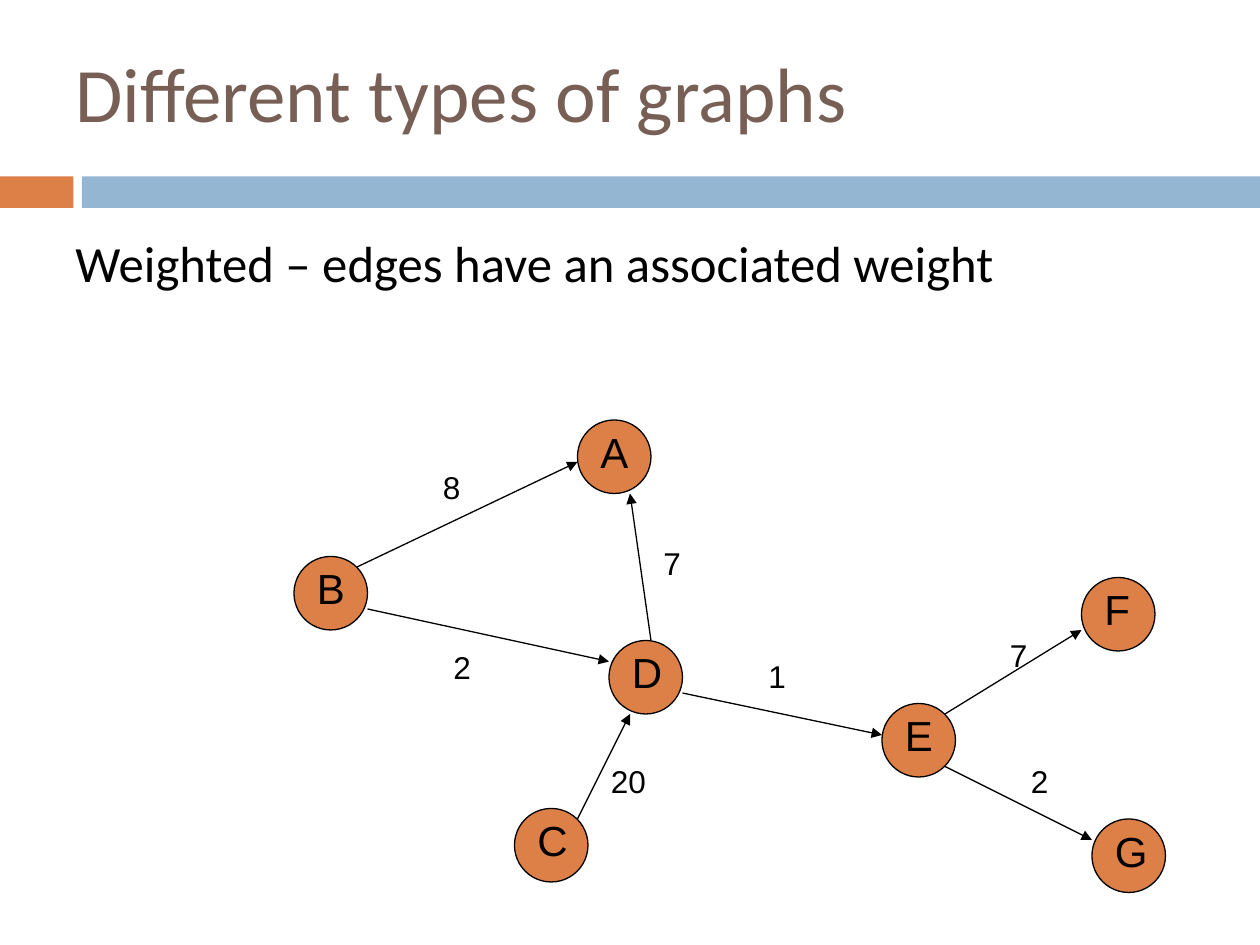
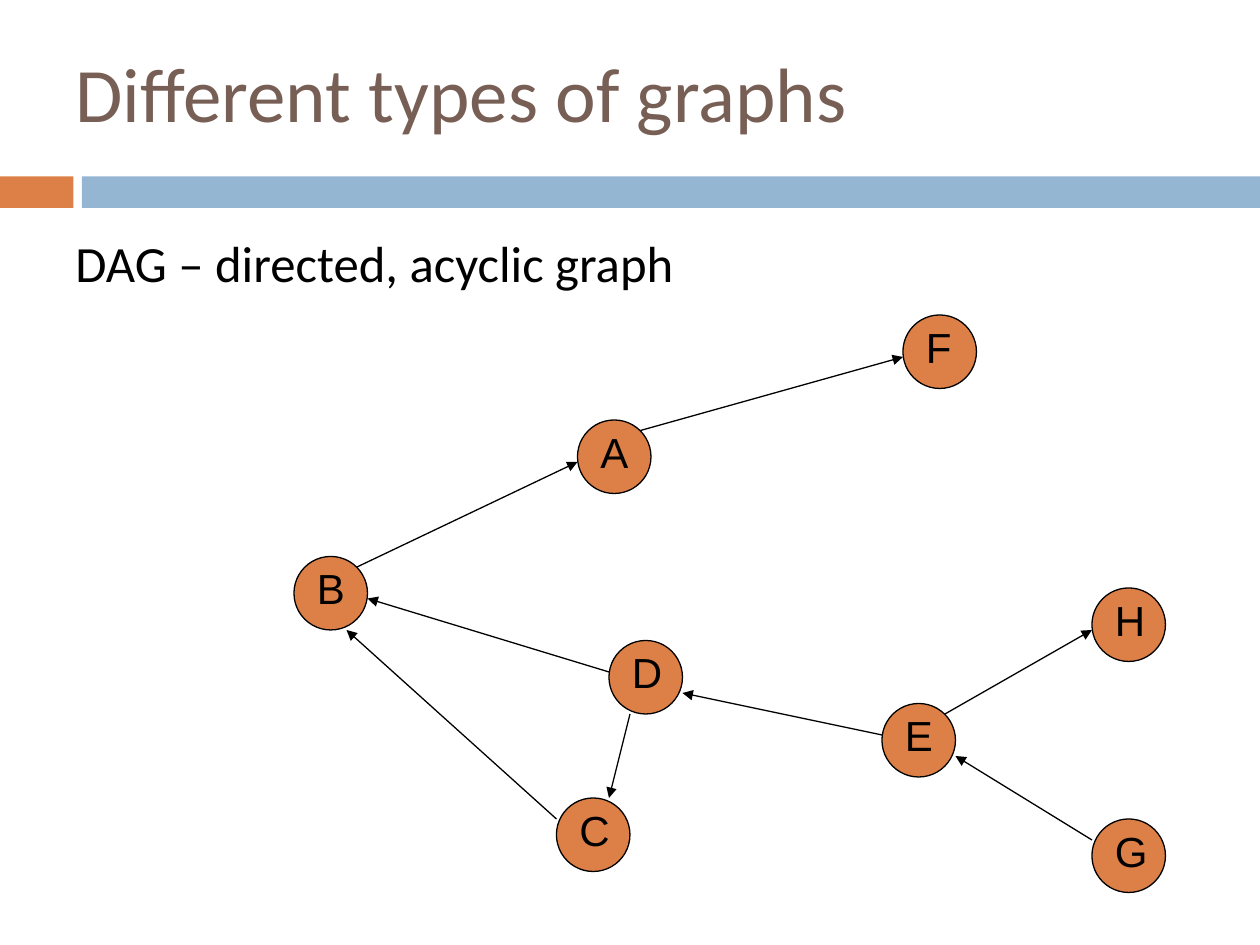
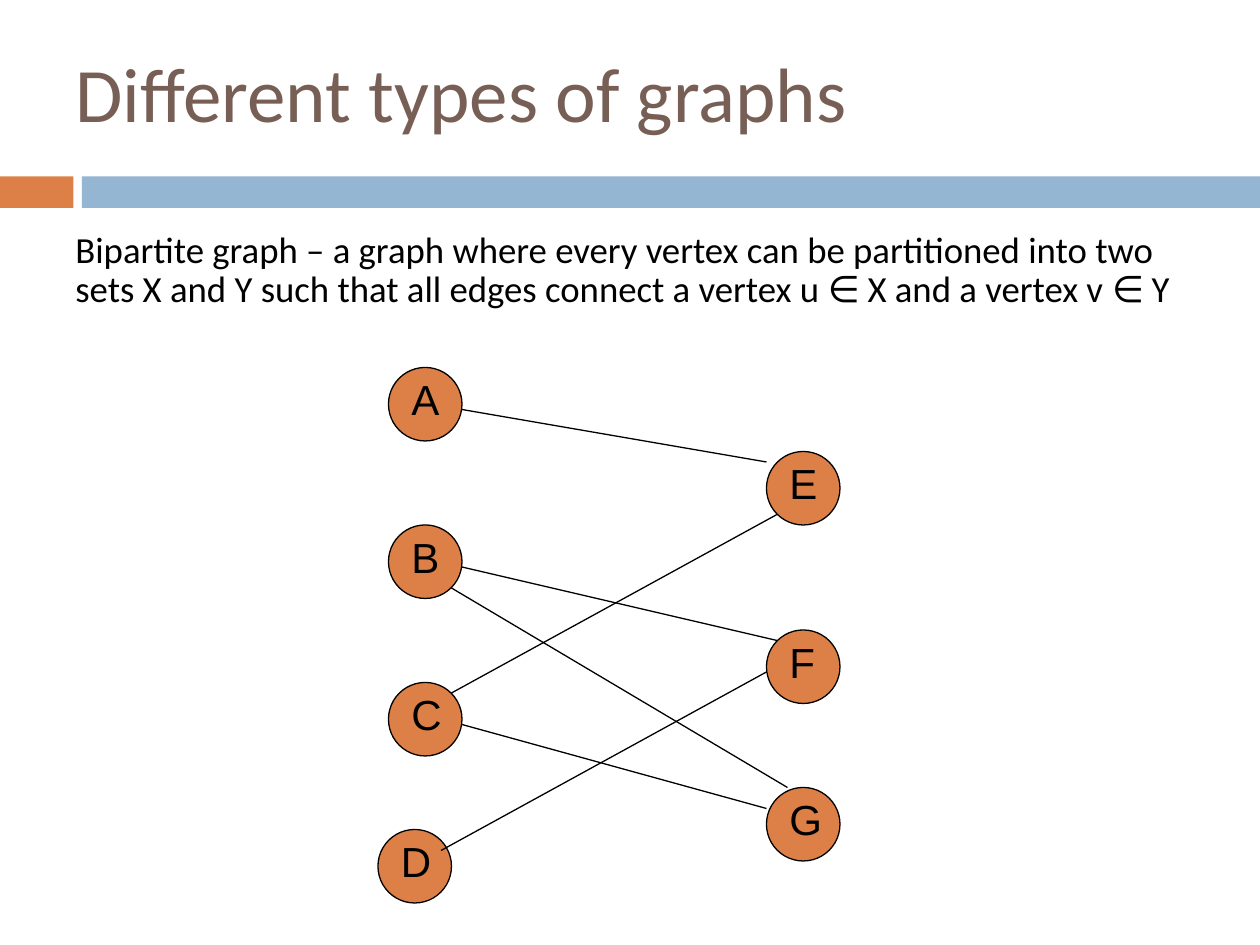
from lxml.etree import SubElement
from pptx import Presentation
from pptx.dml.color import RGBColor
from pptx.enum.shapes import MSO_CONNECTOR as CONN, MSO_SHAPE as SHAPE
from pptx.enum.text import MSO_ANCHOR as ANCHOR
from pptx.oxml.ns import qn
from pptx.util import Pt

COLORS = {"node": "DD8047", "band": "94B6D2", "title": "775F55", "ink": "000000"}
TITLE = "Different types of graphs"
NODE = 42
LABEL_INDENT = 6

WEIGHTED_NODES = {
    "A": (330, 240), "B": (168, 318), "C": (294, 462), "E": (504, 402),
    "D": (348, 366), "F": (618, 330), "G": (624, 468),
}
WEIGHTED_EDGES = [
    (204, 324, 330, 264), (210, 348, 348, 378), (372, 366, 360, 282),
    (330, 468, 360, 408), (390, 396, 504, 420), (540, 408, 618, 360),
    (540, 438, 624, 480),
]
WEIGHTS = [
    ("8", 246, 264), ("2", 252, 367), ("7", 372, 307.5), ("20", 342, 432),
    ("1", 432, 372), ("7", 570, 360), ("2", 582, 432),
]
DAG_NODES = {
    **WEIGHTED_NODES, "C": (318, 456), "F": (516, 180), "H": (624, 336),
}
DAG_EDGES = [
    (204, 324, 330, 264), (366, 246, 516, 204), (348, 384, 210, 342),
    (318, 468, 198, 360), (360, 408, 348, 456), (504, 420, 390, 396),
    (540, 408, 624, 360), (624, 480, 546, 432),
]
BIPARTITE_NODES = {
    "A": (222, 210), "B": (222, 300), "C": (222, 390), "E": (438, 258),
    "D": (216, 474), "F": (438, 360), "G": (438, 450),
}
BIPARTITE_EDGES = [
    (252, 486, 438, 384), (264, 414, 438, 462), (258, 396, 444, 294),
    (264, 324, 444, 366), (264, 234, 438, 264), (258, 336, 450, 450),
]


def rgb(name):
    return RGBColor.from_string(COLORS[name])


def add_text(s, text, x, y, w, h, size, font="Calibri", color="ink"):
    tf = s.shapes.add_textbox(Pt(x), Pt(y), Pt(w), Pt(h)).text_frame
    tf.word_wrap = True
    p = tf.paragraphs[0]
    p.text = text
    p.font.name, p.font.size = font, Pt(size)
    p.font.color.rgb = rgb(color)
    return tf


def add_label(s, text, x, y, w, h, size):
    p = add_text(s, text, x, y, w, h, size, "Arial").paragraphs[0]
    p.space_before = Pt(0)
    before = p._p.pPr.find(qn("a:spcBef"))
    before.remove(before[0])
    SubElement(before, qn("a:spcPct"), val="50000")


def add_filled(s, kind, x, y, w, h, color):
    sp = s.shapes.add_shape(kind, Pt(x), Pt(y), Pt(w), Pt(h))
    sp.shadow.inherit = False
    sp.fill.solid()
    sp.fill.fore_color.rgb = rgb(color)
    sp.line.fill.background()
    return sp


def add_node(s, name, x, y):
    sp = add_filled(s, SHAPE.OVAL, x, y, NODE, NODE, "node")
    sp.line.color.rgb = rgb("ink")
    sp.line.width = Pt(0.75)
    add_label(s, name, x + LABEL_INDENT, y, 36, 36, 24)


def add_edge(s, x1, y1, x2, y2, directed):
    edge = s.shapes.add_connector(CONN.STRAIGHT, Pt(x1), Pt(y1), Pt(x2), Pt(y2))
    edge.line.color.rgb = rgb("ink")
    edge.line.width = Pt(0.75)
    if directed:
        SubElement(edge.line._get_or_add_ln(), qn("a:tailEnd"), type="triangle")
    SubElement(edge._element.spPr, qn("a:effectLst"))


def add_graph(s, nodes, edges, directed=True):
    for name, (x, y) in nodes.items():
        add_node(s, name, x, y)
    for ends in edges:
        add_edge(s, *ends, directed)


def add_slide(prs, definition, size=29, spacing=None):
    s = prs.slides.add_slide(prs.slide_layouts[6])
    add_filled(s, SHAPE.RECTANGLE, 0, 100.8, 42, 18, "node")
    add_filled(s, SHAPE.RECTANGLE, 46.8, 100.8, 673.2, 18, "band")
    tf = add_text(s, TITLE, 36, 9.4, 594, 86.4, 44, color="title")
    tf.vertical_anchor = ANCHOR.MIDDLE
    p = add_text(s, definition, 36, 128.7, 648, 78, size).paragraphs[0]
    p.space_before = Pt(7)
    p.line_spacing = spacing
    return s


def main():
    prs = Presentation()
    prs.slide_width, prs.slide_height = Pt(720), Pt(540)

    s = add_slide(prs, "Weighted – edges have an associated weight")
    add_graph(s, WEIGHTED_NODES, WEIGHTED_EDGES)
    for weight, x, y in WEIGHTS:
        add_label(s, weight, x, y, 42, 29, 18)

    s = add_slide(prs, "DAG – directed, acyclic graph")
    add_graph(s, DAG_NODES, DAG_EDGES)

    s = add_slide(
        prs,
        "Bipartite graph – a graph where every vertex can be partitioned into two "
        "sets X and Y such that all edges connect a vertex u ∈ X and a vertex v ∈ Y",
        21, 0.9)
    add_graph(s, BIPARTITE_NODES, BIPARTITE_EDGES, directed=False)

    prs.save("out.pptx")


if __name__ == "__main__":
    main()
